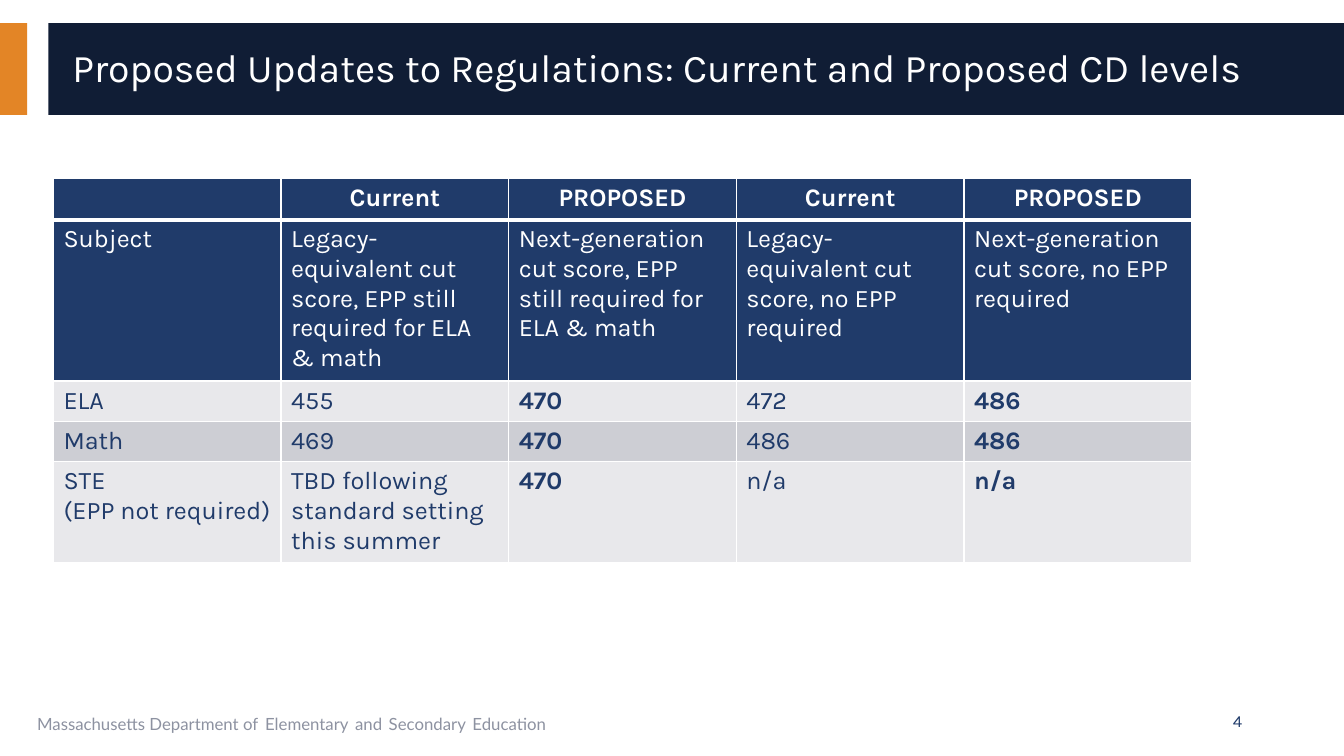
from dataclasses import dataclass

from lxml import etree
from pptx import Presentation
from pptx.dml.color import RGBColor
from pptx.enum.shapes import MSO_SHAPE
from pptx.enum.text import MSO_ANCHOR, PP_ALIGN
from pptx.oxml.ns import qn
from pptx.util import Inches, Pt

RECTANGLE = MSO_SHAPE.RECTANGLE
MIDDLE, TOP = MSO_ANCHOR.MIDDLE, MSO_ANCHOR.TOP
LEFT, CENTER, RIGHT = PP_ALIGN.LEFT, PP_ALIGN.CENTER, PP_ALIGN.RIGHT


@dataclass(frozen=True)
class Theme:
    """Colours, fonts and type sizes of the deck."""
    orange: str = "E38526"
    midnight: str = "101D35"
    navy: str = "203B6A"
    white: str = "FFFFFF"
    grey: str = "8D92A1"
    light_band: str = "E8E8EB"
    dark_band: str = "CDCED4"
    body_font: str = "Karla"
    footer_font: str = "Lato"
    title_size: int = 28
    body_size: int = 18
    small_size: int = 12


THEME = Theme()
ROW_HEIGHTS = [0.41, 1.56, 0.39, 0.39, 0.98]
ROW_FILLS = [THEME.navy, THEME.navy, THEME.light_band, THEME.dark_band, THEME.light_band]
SCORES = [
    ["", "Current", "PROPOSED", "Current", "PROPOSED"],
    ["Subject",
     "Legacy-equivalent cut score, EPP still required for ELA & math",
     "Next-generation cut score, EPP still required for ELA & math",
     "Legacy-equivalent cut score, no EPP required",
     "Next-generation cut score, no EPP required"],
    ["ELA", "455", "470", "472", "486"],
    ["Math", "469", "470", "486", "486"],
    ["STE\n(EPP not required)", "TBD following standard setting this summer",
     "470", "n/a", "n/a"],
]
PROPOSED_COLUMNS = (2, 4)


def add_span(para, text, size, color, font=THEME.body_font, bold=False):
    """Append one formatted run to a paragraph."""
    span = para.add_run()
    span.text = text
    span.font.name = font
    span.font.size = Pt(size)
    span.font.bold = bold
    span.font.color.rgb = RGBColor.from_string(color)


def add_text_box(page, box, anchor=TOP, align=LEFT):
    """Add a wrapping text box and return its first paragraph."""
    frame = page.shapes.add_textbox(*map(Inches, box)).text_frame
    frame.word_wrap = True
    frame.vertical_anchor = anchor
    para = frame.paragraphs[0]
    para.alignment = align
    return para


def add_bar(page, box, color):
    """Add a plain filled rectangle."""
    bar = page.shapes.add_shape(RECTANGLE, *map(Inches, box))
    bar.shadow.inherit = False
    bar.fill.solid()
    bar.fill.fore_color.rgb = RGBColor.from_string(color)
    bar.line.fill.background()


def add_header(page, box, title):
    """Add the orange tab, the dark band and the title."""
    left, top, width, height = box
    add_bar(page, (left, top, 0.27, height), THEME.orange)
    add_bar(page, (left + 0.48, top, width - 0.48, height), THEME.midnight)
    para = add_text_box(page, (left + 0.62, top + 0.09, 12.44, 0.74), MIDDLE)
    para.line_spacing = 0.9
    add_span(para, title, THEME.title_size, THEME.white)


def set_borders(cell, top_width, bottom_width):
    """Draw white lines on the four sides of a cell."""
    properties = cell._tc.get_or_add_tcPr()
    widths = {"lnL": 1, "lnR": 1, "lnT": top_width, "lnB": bottom_width}
    for side, width in widths.items():
        line = etree.SubElement(properties, qn(f"a:{side}"), w=str(Pt(width)))
        fill = etree.SubElement(line, qn("a:solidFill"))
        etree.SubElement(fill, qn("a:srgbClr"), val=THEME.white)


def fill_cell(cell, text, row, column):
    """Format one table cell and write its text."""
    set_borders(cell, 3 if row == 1 else 1, 3 if row == 0 else 1)
    cell.fill.solid()
    cell.fill.fore_color.rgb = RGBColor.from_string(ROW_FILLS[row])
    color = THEME.white if row < 2 else THEME.navy
    bold = row == 0 or (row > 1 and column in PROPOSED_COLUMNS)
    frame = cell.text_frame
    for index, line in enumerate(text.splitlines()):
        para = frame.add_paragraph() if index else frame.paragraphs[0]
        para.alignment = CENTER if row == 0 else LEFT
        add_span(para, line, THEME.body_size, color, bold=bold)


def add_score_table(page, box):
    """Add the table of current and proposed cut scores."""
    table = page.shapes.add_table(len(SCORES), len(SCORES[0]), *map(Inches, box)).table
    for column in table.columns:
        column.width = Inches(box[2] / len(SCORES[0]))
    for row, texts in enumerate(SCORES):
        table.rows[row].height = Inches(ROW_HEIGHTS[row])
        for column, text in enumerate(texts):
            fill_cell(table.cell(row, column), text, row, column)


def add_footer(page, box, phrases, number):
    """Add the department name and the page number."""
    left, top, width, height = box
    para = add_text_box(page, (left, top, 8.44, height))
    for index, phrase in enumerate(phrases):
        if index:
            add_span(para, " ", THEME.body_size, THEME.navy, THEME.footer_font)
        add_span(para, phrase, THEME.small_size, THEME.grey, THEME.footer_font)
    para = add_text_box(page, (left + width - 3, top, 3, height), MIDDLE, RIGHT)
    add_span(para, number, THEME.small_size, THEME.navy)


def main():
    """Build and save the deck."""
    deck = Presentation()
    deck.slide_width, deck.slide_height = Inches(13.33), Inches(7.5)
    page = deck.slides.add_slide(deck.slide_layouts[6])
    add_header(page, (0, 0.23, 13.33, 0.91),
               "Proposed Updates to Regulations: Current and Proposed CD levels")
    add_score_table(page, (0.53, 1.77, 11.29, sum(ROW_HEIGHTS)))
    add_footer(page, (0.27, 6.95, 12.15, 0.4),
               ["Massachusetts Department of", "Elementary", "and", "Secondary", "Education"],
               "4")
    deck.save("out.pptx")


if __name__ == "__main__":
    main()
